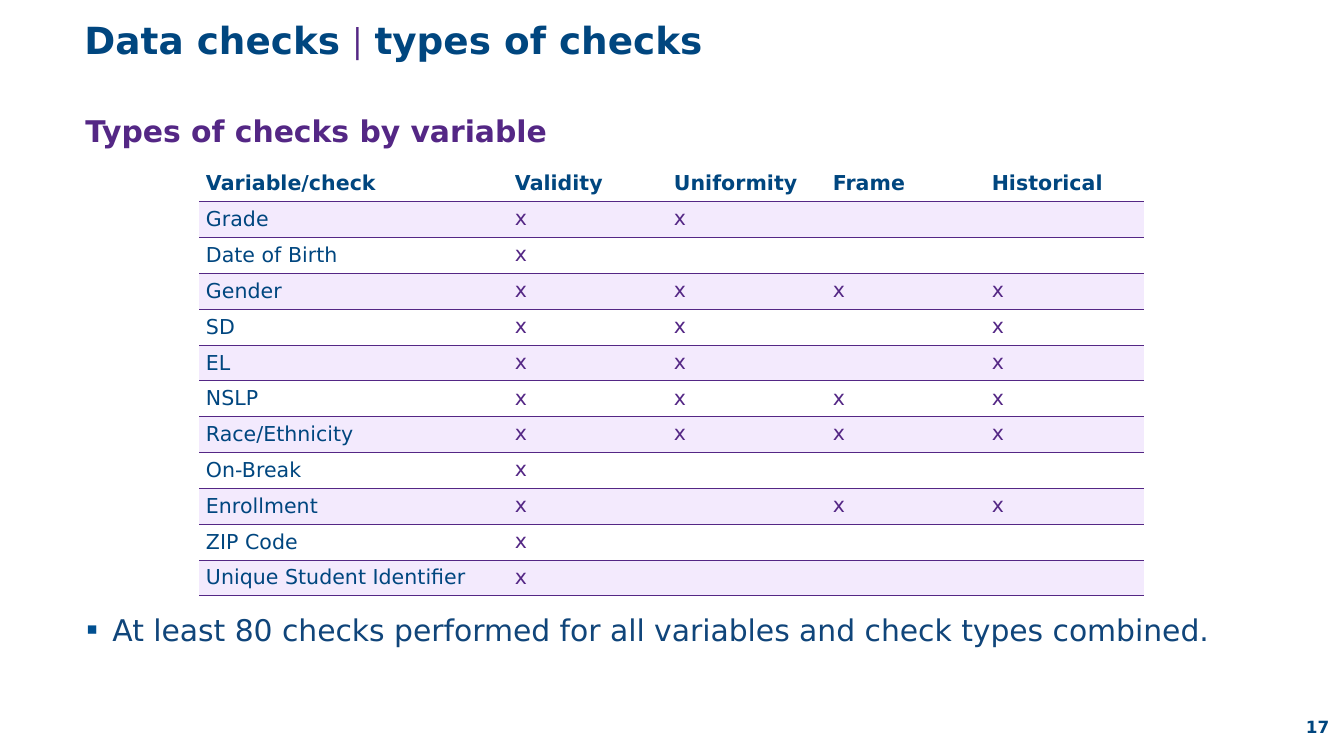
from lxml.etree import SubElement
from pptx import Presentation
from pptx.dml.color import RGBColor
from pptx.enum.text import MSO_ANCHOR, MSO_AUTO_SIZE, PP_ALIGN
from pptx.oxml import parse_xml
from pptx.oxml.ns import nsdecls, qn
from pptx.util import Pt

# Content
TITLE = [("Data checks", "heading"), (" | ", "divider"), ("types of checks", "heading")]
SUBTITLE = "Types of checks by variable"
SUMMARY = "At least 80 checks performed for all variables and check types combined."
PAGE_NUMBER = "17"
CHECKS = ["Validity", "Uniformity", "Frame", "Historical"]
VARIABLES = [
    ("Grade", ["Validity", "Uniformity"]),
    ("Date of Birth", ["Validity"]),
    ("Gender", CHECKS),
    ("SD", ["Validity", "Uniformity", "Historical"]),
    ("EL", ["Validity", "Uniformity", "Historical"]),
    ("NSLP", CHECKS),
    ("Race/Ethnicity", CHECKS),
    ("On-Break", ["Validity"]),
    ("Enrollment", ["Validity", "Frame", "Historical"]),
    ("ZIP Code", ["Validity"]),
    ("Unique Student Identifier", ["Validity"]),
]

# Formats
COLORS = {"navy": "00467F", "purple": "542785", "lilac": "F3EAFD",
          "summary": "10457A", "bullet": "004F90"}
SANS = "DejaVu Sans"
FONTS = {
    "heading": ({"name": SANS, "size": Pt(20), "bold": True}, "navy"),
    "divider": ({"name": "Calibri", "size": Pt(20), "bold": False}, "purple"),
    "subtitle": ({"name": SANS, "size": Pt(16), "bold": True}, "purple"),
    "summary": ({"name": SANS, "size": Pt(16), "bold": False}, "summary"),
    "page": ({"name": SANS, "size": Pt(9), "bold": True}, "navy"),
    "header": ({"name": SANS, "size": Pt(11), "bold": True}, "navy"),
    "variable": ({"name": SANS, "size": Pt(11), "bold": False}, "navy"),
    "mark": ({"name": SANS, "size": Pt(11), "bold": False}, "purple"),
}

# Lengths in px
PX = 914400 / 134.4
SLIDE_SIZE = (1344, 756)
TITLE_BOX = (71, 0, 1232, 85)
BODY_BOX = (64, 106, 1224, 562)
PAGE_BOX = (1306, 707, 38, 40)
TABLE_BOX = (199, 166, 945, 430)
VARIABLE_WIDTH = 309
CELL_MARGINS = {"left": 7, "right": 7, "top": 6, "bottom": 6}
NO_STYLE_TABLE = "{2D5ABB26-0587-4C30-8999-92F81FD0307C}"


def emu(length):
    return round(length * PX)


def apply(target, values):
    for name, value in values.items():
        setattr(target, name, value)


def place(shape, box):
    apply(shape, dict(zip(("left", "top", "width", "height"), map(emu, box))))


def write(paragraph, text, style):
    run = paragraph.add_run()
    run.text = text
    values, color = FONTS[style]
    apply(run.font, values)
    run.font.color.rgb = RGBColor.from_string(COLORS[color])


def set_bullet(paragraph, indent, hanging, *elements):
    properties = paragraph._p.get_or_add_pPr()
    properties.set("marL", str(emu(indent)))
    properties.set("indent", str(emu(-hanging)))
    for element in elements:
        properties.append(parse_xml(element))


def underline_cell(cell):
    cell._tc.get_or_add_tcPr().insert(0, parse_xml(
        f'<a:lnB {nsdecls("a")} w="6350"><a:solidFill>'
        f'<a:srgbClr val="{COLORS["purple"]}"/></a:solidFill></a:lnB>'))


def fill_cell(cell, text, style, shaded):
    apply(cell, {f"margin_{side}": emu(inset) for side, inset in CELL_MARGINS.items()})
    cell.vertical_anchor = MSO_ANCHOR.MIDDLE if style == "mark" else MSO_ANCHOR.BOTTOM
    paragraph = cell.text_frame.paragraphs[0]
    paragraph.line_spacing = Pt(12)
    if text:
        write(paragraph, text, style)
    else:
        # A small end mark keeps empty cells from stretching the row
        SubElement(paragraph._p, qn("a:endParaRPr"), sz="800")
    if shaded:
        cell.fill.solid()
        cell.fill.fore_color.rgb = RGBColor.from_string(COLORS["lilac"])
    else:
        cell.fill.background()
    underline_cell(cell)


def add_title(slide):
    title = slide.shapes.title
    place(title, TITLE_BOX)
    apply(title.text_frame, {"vertical_anchor": MSO_ANCHOR.MIDDLE,
                             "auto_size": MSO_AUTO_SIZE.NONE})
    heading = title.text_frame.paragraphs[0]
    apply(heading, {"alignment": PP_ALIGN.LEFT, "line_spacing": 0.9})
    for text, style in TITLE:
        write(heading, text, style)


def add_body(slide):
    body = slide.placeholders[1]
    place(body, BODY_BOX)
    body.text_frame.auto_size = MSO_AUTO_SIZE.NONE
    subtitle = body.text_frame.paragraphs[0]
    set_bullet(subtitle, 8, 0, f'<a:buNone {nsdecls("a")}/>')
    apply(subtitle, {"space_before": Pt(0), "space_after": Pt(6)})
    write(subtitle, SUBTITLE, "subtitle")

    # The space before the summary leaves room for the table
    summary = body.text_frame.add_paragraph()
    set_bullet(
        summary, 35, 26,
        f'<a:buClr {nsdecls("a")}><a:srgbClr val="{COLORS["bullet"]}"/></a:buClr>',
        f'<a:buSzPct {nsdecls("a")} val="110000"/>',
        f'<a:buFont {nsdecls("a")} typeface="Calibri"/>',
        f'<a:buChar {nsdecls("a")} char="▪"/>')
    apply(summary, {"space_before": Pt(242), "space_after": Pt(6)})
    write(summary, SUMMARY, "summary")


def add_checks_table(slide):
    rows = [["Variable/check", *CHECKS]]
    rows += [[variable, *("x" if check in passed else "" for check in CHECKS)]
             for variable, passed in VARIABLES]
    table = slide.shapes.add_table(
        len(rows), len(rows[0]), *map(emu, TABLE_BOX)).table
    apply(table, {"first_row": False, "horz_banding": False})
    table._tbl.tblPr.find(qn("a:tableStyleId")).text = NO_STYLE_TABLE

    check_width = (TABLE_BOX[2] - VARIABLE_WIDTH) / len(CHECKS)
    for index, column in enumerate(table.columns):
        column.width = emu(check_width if index else VARIABLE_WIDTH)
    for row_index, row in enumerate(rows):
        table.rows[row_index].height = emu(TABLE_BOX[3] / len(rows))
        for column_index, text in enumerate(row):
            style = "header" if row_index == 0 else "mark" if column_index else "variable"
            fill_cell(table.cell(row_index, column_index), text, style,
                      shaded=row_index % 2 == 1)


def add_page_number(slide):
    page = slide.shapes.add_textbox(*map(emu, PAGE_BOX)).text_frame
    apply(page, {"word_wrap": True, "margin_left": 0,
                 "vertical_anchor": MSO_ANCHOR.MIDDLE})
    write(page.paragraphs[0], PAGE_NUMBER, "page")


def main():
    presentation = Presentation()
    apply(presentation, dict(zip(("slide_width", "slide_height"), map(emu, SLIDE_SIZE))))
    slide = presentation.slides.add_slide(presentation.slide_layouts[1])
    for add_part in (add_title, add_body, add_page_number, add_checks_table):
        add_part(slide)
    presentation.save("out.pptx")


if __name__ == "__main__":
    main()
